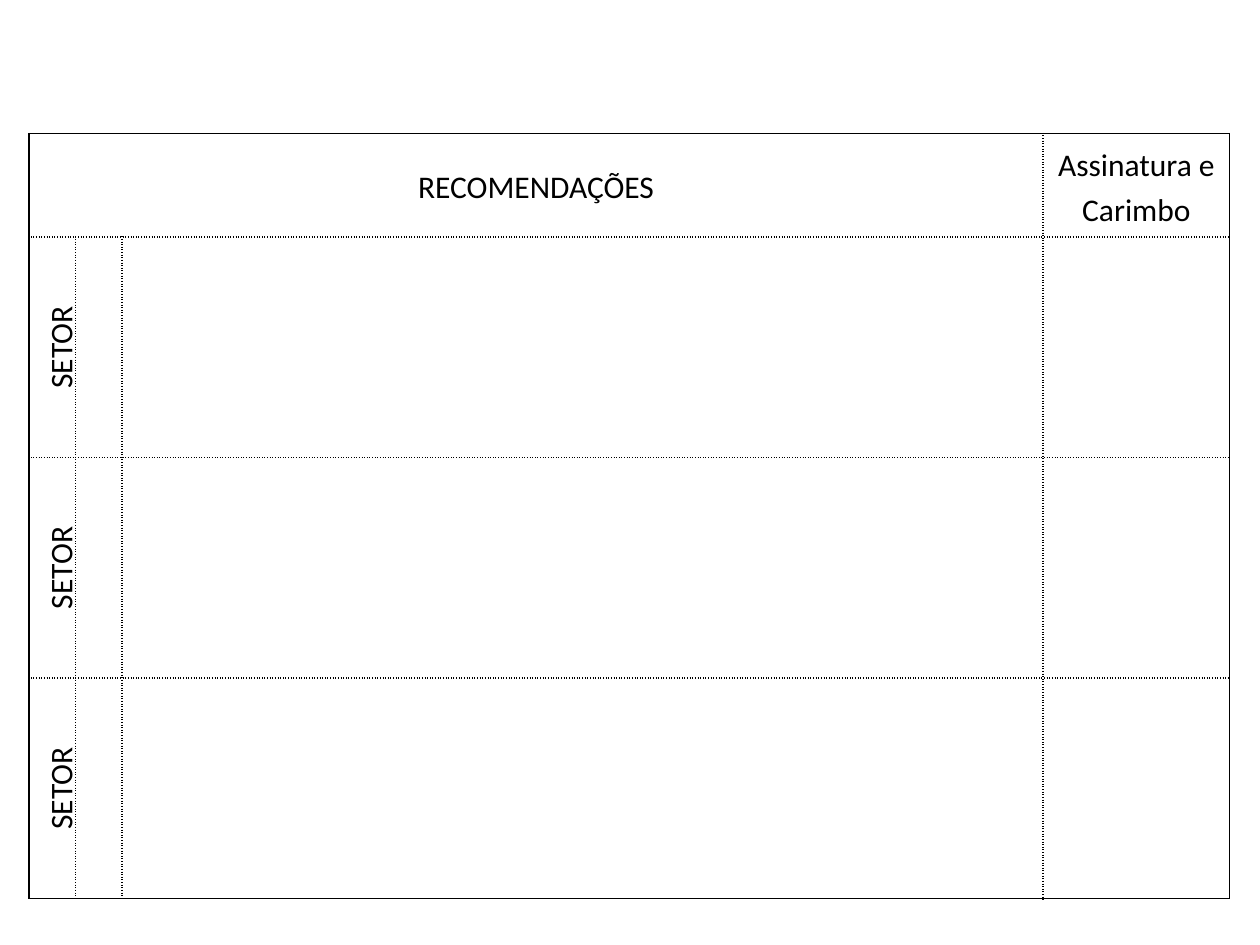
import pptx
import pptx.util
import pptx.dml.color
import pptx.enum.text
import pptx.oxml
import pptx.oxml.ns
from pptx.util import Inches

HEADINGS = {0: "RECOMENDAÇÕES", 3: "Assinatura e Carimbo"}
SECTORS = ["SETOR", "SETOR", "SETOR"]
COLUMN_WIDTHS = [0.37, 0.37, 7.31, 1.48]
ROW_HEIGHTS = [0.77] + [1.75] * len(SECTORS)
LEFT, TOP = 0.23, 1.06
INK = "000000"


def set_borders(cell, solid_sides):
    """Draw a solid line on the given sides and a dotted one on the others."""
    properties = cell._tc.get_or_add_tcPr()
    for position, side in enumerate("LRTB"):
        dash = "solid" if side in solid_sides else "sysDot"
        properties.insert(position, pptx.oxml.parse_xml(
            f'<a:ln{side} {pptx.oxml.ns.nsdecls("a")} w="12700">'
            f'<a:solidFill><a:srgbClr val="{INK}"/></a:solidFill>'
            f'<a:prstDash val="{dash}"/></a:ln{side}>'))


def write(cell, text):
    """Put centred text in a cell."""
    paragraph = cell.text_frame.paragraphs[0]
    paragraph.alignment = pptx.enum.text.PP_ALIGN.CENTER
    paragraph.line_spacing = 1.15
    run = paragraph.add_run()
    run.text = text
    run.font.size = pptx.util.Pt(18)
    run.font.name = "Calibri"
    run.font.color.rgb = pptx.dml.color.RGBColor.from_string(INK)


def main():
    """Build the recommendations form."""
    deck = pptx.Presentation()
    deck.slide_width, deck.slide_height = Inches(10), Inches(7.5)
    slide = deck.slides.add_slide(deck.slide_layouts[6])
    last_row, last_column = len(ROW_HEIGHTS) - 1, len(COLUMN_WIDTHS) - 1
    form = slide.shapes.add_table(
        last_row + 1, last_column + 1, Inches(LEFT), Inches(TOP),
        Inches(sum(COLUMN_WIDTHS)), Inches(sum(ROW_HEIGHTS))).table
    form.first_row = form.horz_banding = False
    for column, width in zip(form.columns, COLUMN_WIDTHS):
        column.width = Inches(width)
    for row, height in zip(form.rows, ROW_HEIGHTS):
        row.height = Inches(height)

    for r in range(last_row + 1):
        for c in range(last_column + 1):
            cell = form.cell(r, c)
            cell.fill.background()
            cell.vertical_anchor = pptx.enum.text.MSO_ANCHOR.MIDDLE
            cell.margin_left = cell.margin_right = Inches(0.07)
            cell.margin_top = cell.margin_bottom = Inches(0.06)
            outer = {"L": c == 0, "R": c == last_column,
                     "T": r == 0, "B": r == last_row}
            set_borders(cell, [side for side in outer if outer[side]])

    form.cell(0, 0).merge(form.cell(0, 2))
    for c, heading in HEADINGS.items():
        write(form.cell(0, c), heading)
    for r, sector in enumerate(SECTORS, start=1):
        write(form.cell(r, 0), sector)
        form.cell(r, 0)._tc.get_or_add_tcPr().set("vert", "vert270")
    deck.save("out.pptx")


if __name__ == "__main__":
    main()
